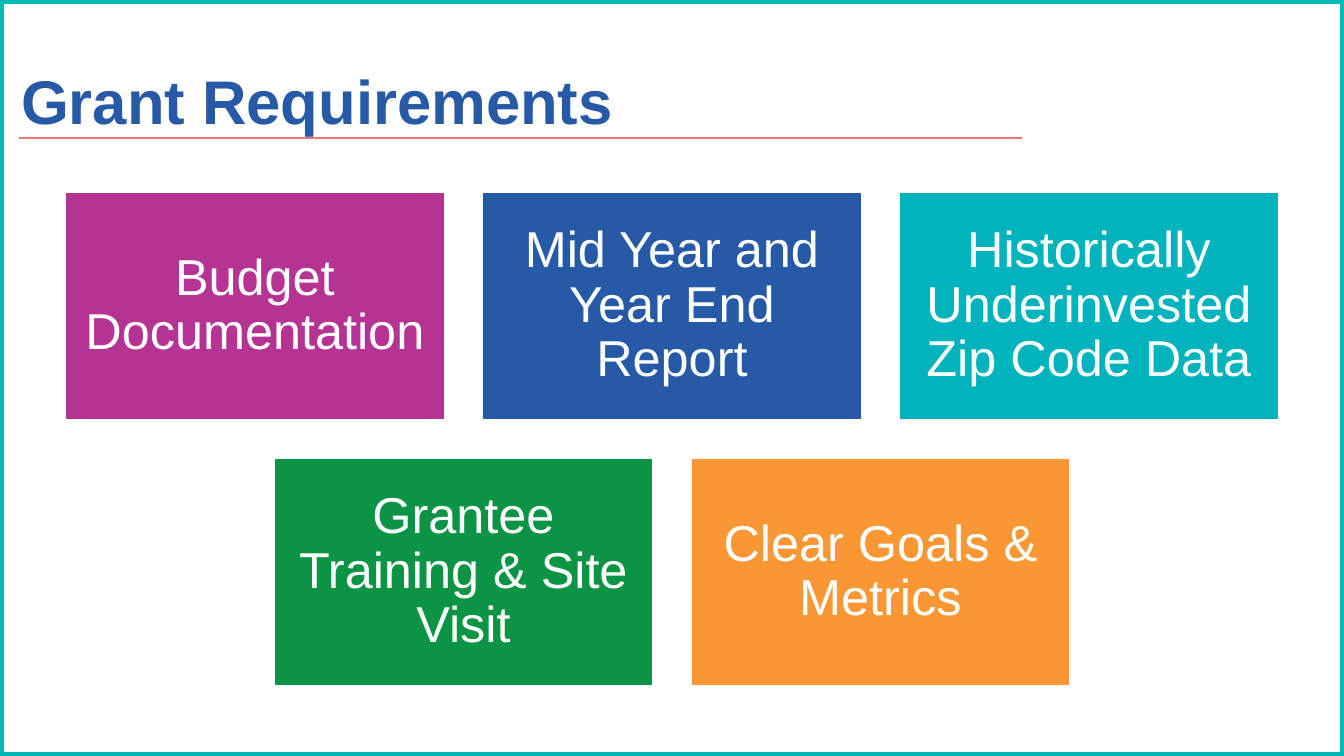
from dataclasses import dataclass

from lxml.etree import SubElement
from pptx import Presentation
from pptx.dml.color import RGBColor
from pptx.enum.shapes import MSO_CONNECTOR, MSO_SHAPE
from pptx.enum.text import MSO_ANCHOR, PP_ALIGN
from pptx.oxml.ns import qn
from pptx.util import Pt

TITLE = "Grant Requirements"
REQUIREMENT_ROWS = [
    [
        ("Budget Documentation", "B53392"),
        ("Mid Year and Year End Report", "2659A6"),
        ("Historically Underinvested Zip Code Data", "00B3BC"),
    ],
    [
        ("Grantee Training & Site Visit", "0B9444"),
        ("Clear Goals & Metrics", "F89733"),
    ],
]


@dataclass(frozen=True)
class Theme:
    font: str = "Arial"
    title_size: float = 44
    tile_size: float = 36
    title: str = "2659A6"
    white: str = "FFFFFF"
    border: str = "00B8B4"
    rule: str = "ED757A"


THEME = Theme()
EMU_PER_PX = 914400 / 100.8
SLIDE_W, SLIDE_H = 1344, 756
TITLE_BOX = (11, 32, 1159, 146)
RULE_LEFT, RULE_RIGHT, RULE_Y = 19, 1022, 138
TILE_W, TILE_H, TILE_GAP, TILES_TOP = 379, 228, 38, 192
TILE_INSET = 15


def px(length):
    return round(length * EMU_PER_PX)


def set_line(shape, color, width):
    shape.line.color.rgb = RGBColor.from_string(color)
    shape.line.width = Pt(width)


def write(shape, text, align, inset=None, **font_values):
    frame = shape.text_frame
    frame.text = text
    frame.word_wrap = True
    frame.vertical_anchor = MSO_ANCHOR.MIDDLE
    if inset is not None:
        for side in ("left", "top", "right", "bottom"):
            setattr(frame, f"margin_{side}", px(inset))
    paragraph = frame.paragraphs[0]
    paragraph.alignment = align
    paragraph.line_spacing = 0.9
    color = font_values.pop("color")
    for key, value in {"name": THEME.font, **font_values}.items():
        setattr(paragraph.runs[0].font, key, value)
    paragraph.runs[0].font.color.rgb = RGBColor.from_string(color)


def add_box(slide, left, top, width, height):
    box = slide.shapes.add_shape(
        MSO_SHAPE.RECTANGLE, *map(px, (left, top, width, height)))
    box.shadow.inherit = False
    return box


def add_heading(slide):
    """Put the border and rule behind the title."""
    border = add_box(slide, 0, 0, SLIDE_W, SLIDE_H)
    border.fill.background()
    set_line(border, THEME.border, 5.75)

    rule = slide.shapes.add_connector(
        MSO_CONNECTOR.STRAIGHT,
        *map(px, (RULE_LEFT, RULE_Y, RULE_RIGHT, RULE_Y)))
    set_line(rule, THEME.rule, 1.5)
    SubElement(rule.element.spPr, qn("a:effectLst"))

    title = slide.shapes.title
    title.left, title.top, title.width, title.height = map(px, TITLE_BOX)
    write(title, TITLE, PP_ALIGN.LEFT, size=Pt(THEME.title_size),
          bold=True, color=THEME.title)
    for backdrop in (border, rule):
        title.element.addprevious(backdrop.element)


def add_requirements(slide):
    """Centre each row of tiles on the slide."""
    for row, requirements in enumerate(REQUIREMENT_ROWS):
        row_width = len(requirements) * (TILE_W + TILE_GAP) - TILE_GAP
        row_left = (SLIDE_W - row_width) / 2
        top = TILES_TOP + row * (TILE_H + TILE_GAP)
        for column, (requirement, color) in enumerate(requirements):
            left = row_left + column * (TILE_W + TILE_GAP)
            tile = add_box(slide, left, top, TILE_W, TILE_H)
            tile.fill.solid()
            tile.fill.fore_color.rgb = RGBColor.from_string(color)
            set_line(tile, THEME.white, 1)
            write(tile, requirement, PP_ALIGN.CENTER, TILE_INSET,
                  size=Pt(THEME.tile_size), color=THEME.white)


def main():
    presentation = Presentation()
    presentation.slide_width, presentation.slide_height = px(SLIDE_W), px(SLIDE_H)
    slide = presentation.slides.add_slide(
        presentation.slide_layouts.get_by_name("Title Only"))
    add_heading(slide)
    add_requirements(slide)
    presentation.save("out.pptx")


if __name__ == "__main__":
    main()
